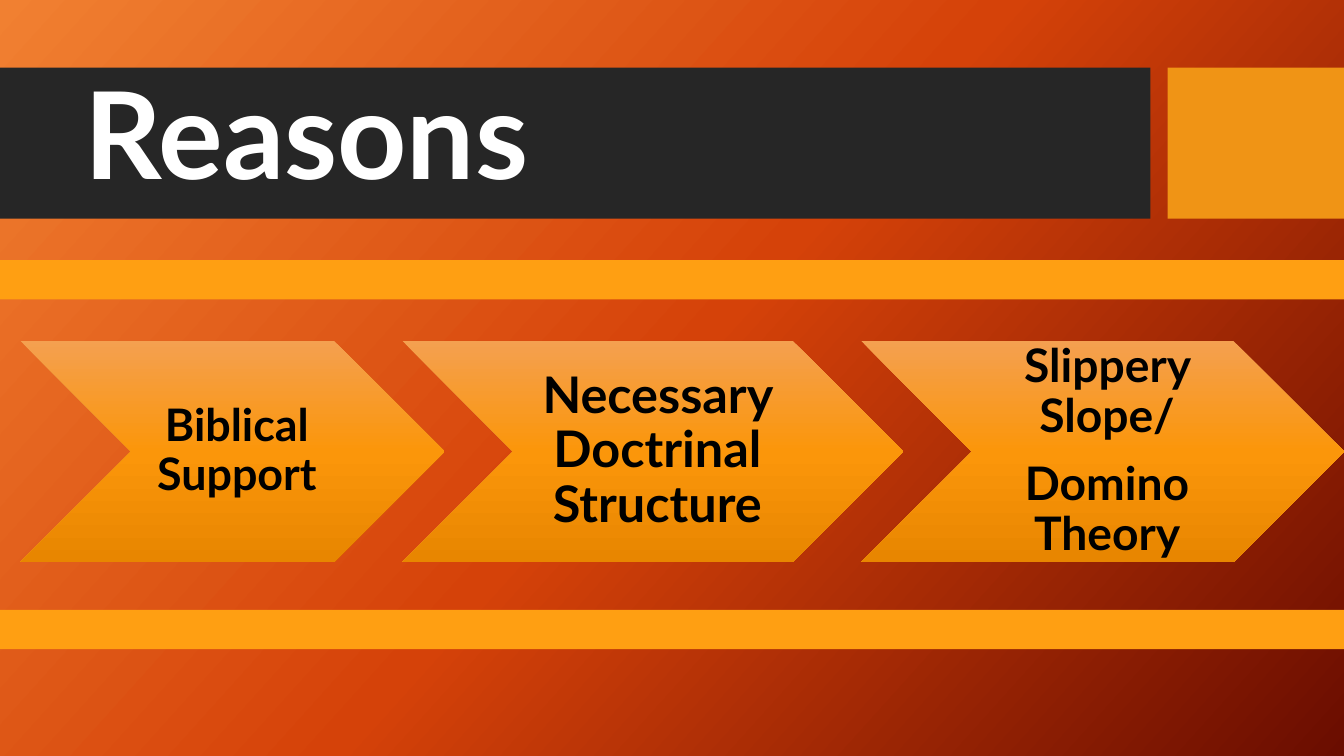
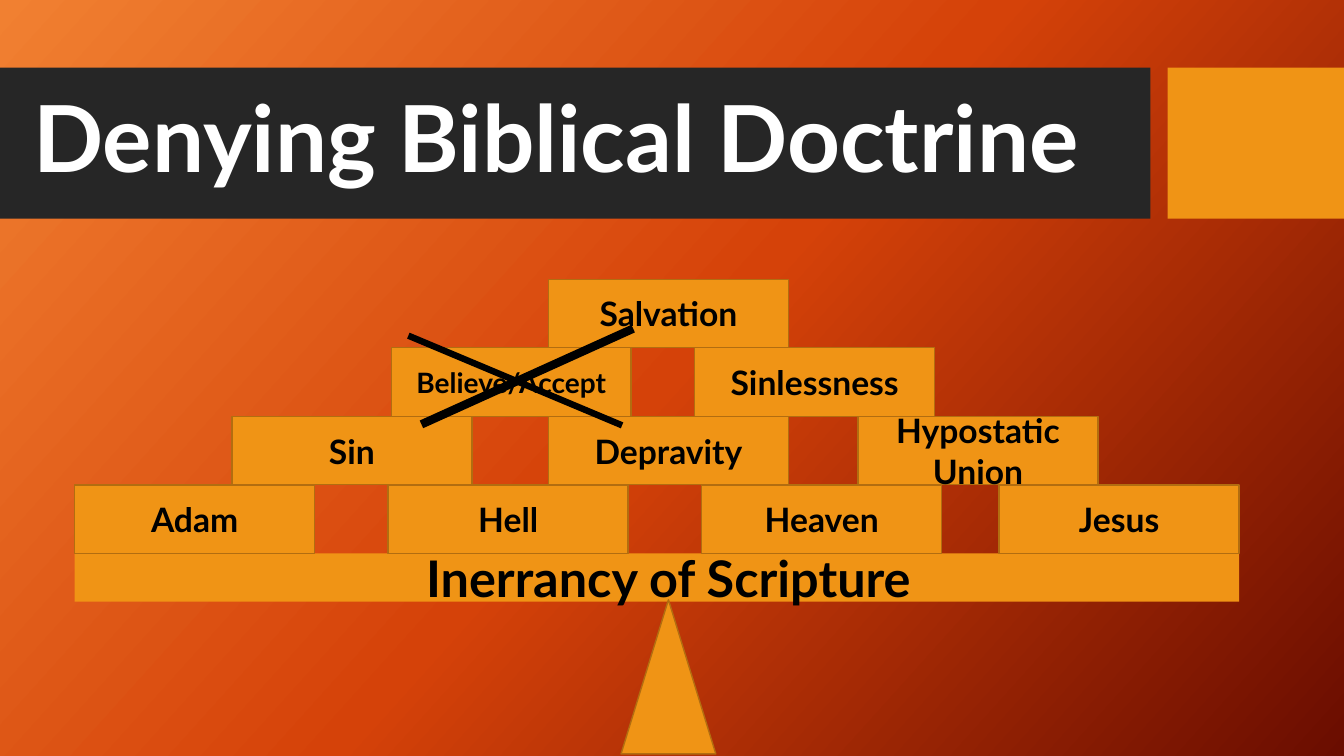
"""Build two slides on the reasons for a doctrine and the effect of denying it."""
from copy import deepcopy

from lxml import etree
from pptx import Presentation
from pptx.dml.color import RGBColor
from pptx.enum.shapes import MSO_CONNECTOR, MSO_SHAPE
from pptx.enum.text import MSO_ANCHOR, MSO_AUTO_SIZE, PP_ALIGN
from pptx.oxml.ns import qn
from pptx.util import Inches, Pt

RECTANGLE = MSO_SHAPE.RECTANGLE
CHEVRON = MSO_SHAPE.CHEVRON
TRIANGLE = MSO_SHAPE.ISOSCELES_TRIANGLE
STRAIGHT = MSO_CONNECTOR.STRAIGHT
LEFT, CENTER = PP_ALIGN.LEFT, PP_ALIGN.CENTER
TOP, MIDDLE = MSO_ANCHOR.TOP, MSO_ANCHOR.MIDDLE
NO_FIT = MSO_AUTO_SIZE.NONE

SLIDE_WIDTH, SLIDE_HEIGHT = 13.33, 7.5
TITLE_ONLY = 5
FONT = "Lato"
COLORS = {
    "white": "FFFFFF",
    "black": "000000",
    "band": "262626",
    "orange": "F09415",
    "outline": "B26D10",
    "stripe": "FF9F12",
}
BACKGROUND_COLORS = ("F18031", "D54209", "6A0D00")
CHEVRON_COLORS = ("F4A050", "FB960A", "E88600")


class Deck:
    """Hold the shared style and the current slide."""

    def __init__(self):
        self.presentation = Presentation()
        self.presentation.slide_width = Inches(SLIDE_WIDTH)
        self.presentation.slide_height = Inches(SLIDE_HEIGHT)
        self.slide = None
        master = self.presentation.slide_master
        self.gradient(master, master.background.fill, BACKGROUND_COLORS, 42)

    def color(self, name):
        """Return the named colour."""
        return RGBColor.from_string(COLORS[name])

    def gradient(self, owner, fill, colors, clockwise_angle):
        """Give a fill three evenly spaced gradient stops."""
        fill.gradient()
        fill.gradient_angle = 360 - clockwise_angle
        stop_list = owner.element.find(".//" + qn("a:gsLst"))
        stop_list.insert(1, deepcopy(stop_list[0]))
        for index, (stop, color) in enumerate(zip(fill.gradient_stops, colors)):
            stop.color.rgb = RGBColor.from_string(color)
            stop.position = index / 2

    def set_text(self, shape, text, size, color="black", alignment=CENTER,
                 anchor=MIDDLE, line_spacing=1.0, gap=0):
        """Set and format the text of a shape."""
        frame = shape.text_frame
        frame.text = text
        frame.word_wrap = True
        frame.auto_size = NO_FIT
        frame.vertical_anchor = anchor
        for index, paragraph in enumerate(frame.paragraphs):
            paragraph.alignment = alignment
            paragraph.line_spacing = line_spacing
            paragraph.space_before = Pt(gap if index else 0)
            for run in paragraph.runs:
                run.font.name = FONT
                run.font.size = Pt(size)
                run.font.bold = True
                run.font.color.rgb = self.color(color)

    def shape(self, kind, left, top, width, height, fill="orange", outline=None):
        """Add a preset shape with a plain fill."""
        shape = self.slide.shapes.add_shape(
            kind, Inches(left), Inches(top), Inches(width), Inches(height))
        shape.shadow.inherit = False
        shape.fill.solid()
        shape.fill.fore_color.rgb = self.color(fill)
        if outline:
            shape.line.color.rgb = self.color(outline)
            shape.line.width = Pt(1)
        else:
            shape.line.fill.background()
        return shape

    def text_box(self, text, left, top, width, height, size, **style):
        """Add a wrapped text box."""
        box = self.slide.shapes.add_textbox(
            Inches(left), Inches(top), Inches(width), Inches(height))
        self.set_text(box, text, size, **style)
        return box

    def new_slide(self, text, size, left, top, width, height):
        """Start a slide with the title band, accent block and title."""
        layout = self.presentation.slide_layouts[TITLE_ONLY]
        self.slide = self.presentation.slides.add_slide(layout)
        self.shape(RECTANGLE, 0, 0.67, 11.41, 1.5, "band")
        self.shape(RECTANGLE, 11.58, 0.67, 1.75, 1.5)
        title = self.slide.shapes.title
        self.slide.shapes.element.append(title.element)
        title.left, title.top = Inches(left), Inches(top)
        title.width, title.height = Inches(width), Inches(height)
        self.set_text(title, text, size, "white", LEFT, line_spacing=0.9)

    def chevron(self, text, left, width, size):
        """Add a chevron with its label between notch and point."""
        top, height = 3.38, 2.2
        point = height / 2
        chevron = self.shape(CHEVRON, left, top, width, height)
        self.gradient(chevron, chevron.fill, CHEVRON_COLORS, 90)
        label = self.text_box(text, left + point, top, width - height, height,
                              size, line_spacing=0.9, gap=13)
        label.text_frame.margin_left = Inches(0.14)
        label.text_frame.margin_right = Inches(0.05)

    def block(self, text, left, top, height, size=24):
        """Add one labelled building block."""
        block = self.shape(RECTANGLE, left, top, 2.38, height, outline="outline")
        self.set_text(block, text, size)

    def stroke(self, start, end, width):
        """Add a thick black line."""
        line = self.slide.shapes.add_connector(
            STRAIGHT, *(Inches(value) for value in (*start, *end)))
        line.line.color.rgb = self.color("black")
        line.line.width = Pt(width)
        etree.SubElement(line.element.spPr, qn("a:effectLst"))


def build_reasons(deck):
    """Build the slide with three chevrons between two stripes."""
    deck.new_slide("Reasons", 86.4, 0.74, 0.64, 10.51, 1.5)
    chevrons = (
        ("Biblical Support", 0.2, 4.21, 32),
        ("Necessary Doctrinal Structure", 3.99, 4.97, 36),
        ("Slippery Slope/\nDomino Theory", 8.54, 4.79, 33),
    )
    for chevron in chevrons:
        deck.chevron(*chevron)
    for top in (2.58, 6.05):
        deck.shape(RECTANGLE, 0, top, SLIDE_WIDTH, 0.39, "stripe")


def build_denial(deck):
    """Build the slide with blocks balanced on a triangle."""
    deck.new_slide("Denying Biblical Doctrine", 66, 0.23, 0.82, 11.02, 1.18)
    beam_top, block_height = 5.49, 0.68
    deck.shape(RECTANGLE, 0.74, beam_top, 11.55, 0.48)
    deck.text_box("Inerrancy of Scripture", 3.36, 5.38, 6.54, 0.71, 36, anchor=TOP)
    rows = (
        (("Adam", 0.74), ("Hell", 3.85), ("Heaven", 6.96), ("Jesus", 9.91)),
        (("Sin", 2.3), ("Depravity", 5.44), ("Hypostatic Union", 8.51)),
        (("Believe/Accept", 3.88, 20), ("Sinlessness", 6.89)),
        (("Salvation", 5.44),),
    )
    for level, row in enumerate(rows, start=1):
        for text, left, *size in row:
            deck.block(text, left, beam_top - level * block_height,
                       block_height, *size)
    deck.shape(TRIANGLE, 6.16, 5.95, 0.94, 1.53, outline="outline")
    deck.stroke((4.05, 3.33), (6.17, 4.22), 4.6)
    deck.stroke((4.18, 4.21), (6.28, 3.26), 6)


def main():
    """Build and save the presentation."""
    deck = Deck()
    build_reasons(deck)
    build_denial(deck)
    deck.presentation.save("out.pptx")


if __name__ == "__main__":
    main()
